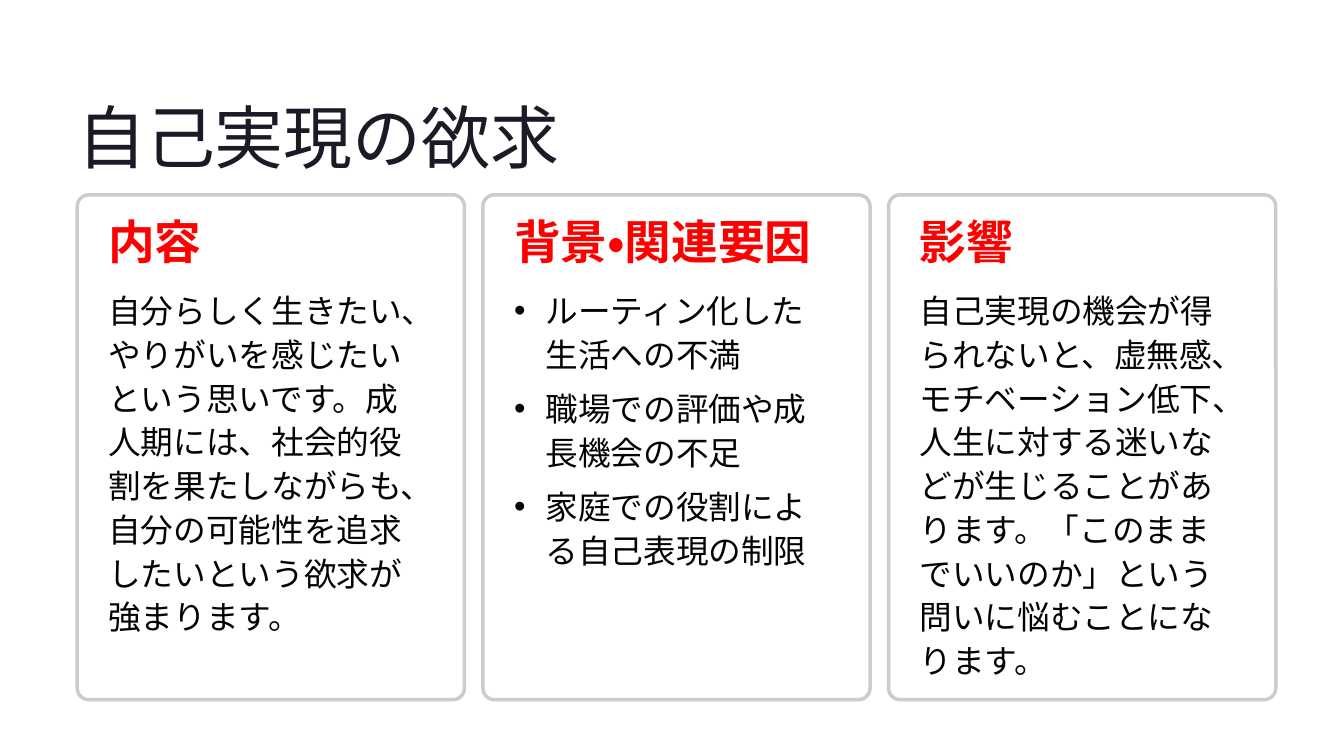
from pptx import Presentation
from pptx.dml.color import RGBColor
from pptx.enum.lang import MSO_LANGUAGE_ID
from pptx.enum.shapes import MSO_SHAPE
from pptx.enum.text import MSO_ANCHOR, MSO_AUTO_SIZE, PP_ALIGN
from pptx.oxml.ns import qn
from pptx.util import Pt
from lxml.etree import SubElement

TITLE = "自己実現の欲求"
CARDS = [
    ("内容", "自分らしく生きたい、やりがいを感じたいという思いです。成人期には、社会的役割を果たしながらも、自分の可能性を追求したいという欲求が強まります。"),
    ("背景・関連要因", [
        "ルーティン化した生活への不満",
        "職場での評価や成長機会の不足",
        "家庭での役割による自己表現の制限",
    ]),
    ("影響", "自己実現の機会が得られないと、虚無感、モチベーション低下、人生に対する迷いなどが生じることがあります。「このままでいいのか」という問いに悩むことになります。"),
]

THEME = {
    "title": {"name": "Inter", "size": Pt(59), "bold": False, "color": "1B1B27", "line": Pt(74)},
    "head": {"name": "Inter", "size": Pt(40), "bold": True, "color": "FF0000", "line": Pt(37)},
    "body": {"name": "Roboto", "size": Pt(28), "bold": False, "color": "030303", "line": Pt(37.5)},
    "card": "FFFFFF",
    "edge": "CCCCCC",
}
FRAME = {
    "margin_left": 0, "margin_top": 0, "margin_right": 0, "margin_bottom": 0,
    "word_wrap": True, "auto_size": MSO_AUTO_SIZE.NONE, "vertical_anchor": MSO_ANCHOR.TOP,
}

LEFT, TOP, WIDE, HIGH, GAP = 66.2, 167, 331.9, 432.8, 15.8
PAD, BODY = 26.7, 270.7


def apply(item, values):
    for key, value in values.items():
        setattr(item, key, value)


def place(shape, left, top, width, height):
    apply(shape, {"left": Pt(left), "top": Pt(top), "width": Pt(width), "height": Pt(height)})


def write(shape, lines, style, after=0):
    frame = shape.text_frame
    apply(frame, FRAME)
    frame.text = "\n".join(lines)
    look = THEME[style]
    for para in frame.paragraphs:
        apply(para, {"alignment": PP_ALIGN.LEFT, "line_spacing": look["line"],
                     "space_before": Pt(0), "space_after": Pt(after)})
        font = para.runs[0].font
        apply(font, {key: look[key] for key in ("name", "size", "bold")})
        font.language_id = MSO_LANGUAGE_ID.JAPANESE
        font.color.rgb = RGBColor.from_string(look["color"])


def panel(shapes, left):
    card = shapes.add_shape(MSO_SHAPE.ROUNDED_RECTANGLE, Pt(left), Pt(TOP), Pt(WIDE), Pt(HIGH))
    card.adjustments[0] = 0.03
    card.shadow.inherit = False
    card.fill.solid()
    card.fill.fore_color.rgb = RGBColor.from_string(THEME["card"])
    tint = card._element.spPr.find(qn("a:solidFill"))[0]
    SubElement(tint, qn("a:alpha"), val="95000")
    card.line.color.rgb = RGBColor.from_string(THEME["edge"])
    card.line.width = Pt(3)


def main():
    deck = Presentation()
    apply(deck, {"slide_width": Pt(1152), "slide_height": Pt(648)})
    slide = deck.slides.add_slide(deck.slide_layouts[1])
    shapes = slide.shapes
    place(shapes.title, LEFT, 77.8, 593, 74)
    write(shapes.title, [TITLE], "title")

    for index, (head, text) in enumerate(CARDS):
        left = LEFT + index * (WIDE + GAP)
        inner = left + PAD
        panel(shapes, left)
        label = shapes.add_textbox(Pt(inner), Pt(TOP + PAD), Pt(WIDE - PAD), Pt(37))
        write(label, [head], "head")
        if isinstance(text, list):
            block = slide.placeholders[1]
            shapes._spTree.append(block._element)
            place(block, inner, 245.5, BODY, 265.7)
            write(block, text, "body", 9)
        else:
            block = shapes.add_textbox(Pt(inner), Pt(245.5), Pt(BODY), Pt(265.7))
            write(block, [text], "body")

    deck.save("out.pptx")


if __name__ == "__main__":
    main()
